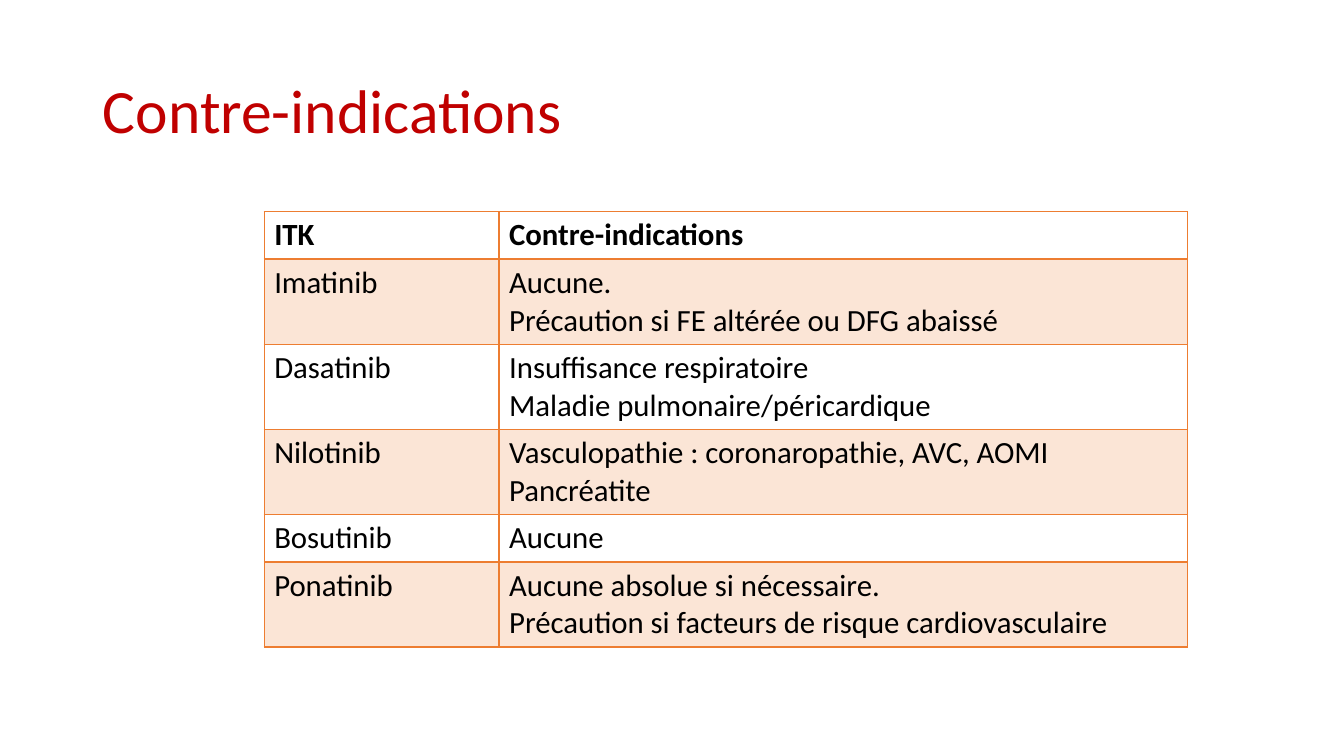
from dataclasses import dataclass

from lxml import etree
from pptx import Presentation
from pptx.dml.color import RGBColor
from pptx.enum.text import MSO_ANCHOR, PP_ALIGN
from pptx.oxml.ns import qn
from pptx.util import Inches, Pt

LEFT, MIDDLE = PP_ALIGN.LEFT, MSO_ANCHOR.MIDDLE

TITLE = "Contre-indications"
ROWS = [
    ("ITK", ["Contre-indications"]),
    ("Imatinib", ["Aucune.", "Précaution si FE altérée ou DFG abaissé"]),
    ("Dasatinib", ["Insuffisance respiratoire", "Maladie pulmonaire/péricardique"]),
    ("Nilotinib", ["Vasculopathie : coronaropathie, AVC, AOMI", "Pancréatite"]),
    ("Bosutinib", ["Aucune"]),
    ("Ponatinib", ["Aucune absolue si nécessaire.",
                   "Précaution si facteurs de risque cardiovasculaire"]),
]
COLUMNS = (2.33, 6.83)
TABLE_LEFT, TABLE_TOP = 2.62, 2.1
LINE_HEIGHT, CELL_PADDING = 0.37, 0.1


@dataclass(frozen=True)
class Theme:
    font: str = "Calibri"
    title: str = "C00000"
    text: str = "000000"
    border: str = "ED7D31"
    band: str = "FBE5D6"
    title_size: int = 44
    table_size: int = 22
    thin: int = 1
    thick: int = 2


THEME = Theme()


def add_run(p, text, size, color, bold=False):
    r = p.add_run()
    r.text = text
    r.font.name = THEME.font
    r.font.size = Pt(size)
    r.font.bold = bold
    r.font.color.rgb = RGBColor.from_string(color)


def set_borders(cell, top, bottom):
    """Draw the four cell edges; they must precede the fill in the XML."""
    tcPr = cell._tc.get_or_add_tcPr()
    widths = {"a:lnL": THEME.thin, "a:lnR": THEME.thin, "a:lnT": top, "a:lnB": bottom}
    for i, (tag, width) in enumerate(widths.items()):
        ln = etree.Element(qn(tag), w=str(Pt(width)))
        fill = etree.SubElement(ln, qn("a:solidFill"))
        etree.SubElement(fill, qn("a:srgbClr"), val=THEME.border)
        tcPr.insert(i, ln)


def fill_cell(cell, lines, row):
    if row % 2:
        cell.fill.solid()
        cell.fill.fore_color.rgb = RGBColor.from_string(THEME.band)
    else:
        cell.fill.background()
    set_borders(cell, THEME.thick if row == 1 else THEME.thin,
                THEME.thick if row == 0 else THEME.thin)
    tf = cell.text_frame
    for i, line in enumerate(lines):
        p = tf.add_paragraph() if i else tf.paragraphs[0]
        add_run(p, line, THEME.table_size, THEME.text, bold=row == 0)


def add_title(s):
    sp = s.shapes.title
    sp.left, sp.top, sp.width, sp.height = map(Inches, (0.92, 0.4, 11.5, 1.45))
    tf = sp.text_frame
    tf.vertical_anchor = MIDDLE
    p = tf.paragraphs[0]
    p.alignment = LEFT
    p.line_spacing = 0.9
    add_run(p, TITLE, THEME.title_size, THEME.title)


def add_drug_table(s):
    heights = [CELL_PADDING + LINE_HEIGHT * len(lines) for _, lines in ROWS]
    box = map(Inches, (TABLE_LEFT, TABLE_TOP, sum(COLUMNS), sum(heights)))
    table = s.shapes.add_table(len(ROWS), len(COLUMNS), *box).table
    for column, width in zip(table.columns, COLUMNS):
        column.width = Inches(width)
    for row, (drug, lines) in enumerate(ROWS):
        table.rows[row].height = Inches(heights[row])
        fill_cell(table.cell(row, 0), [drug], row)
        fill_cell(table.cell(row, 1), lines, row)


def main():
    prs = Presentation()
    prs.slide_width, prs.slide_height = Inches(13.33), Inches(7.5)
    s = prs.slides.add_slide(prs.slide_layouts.get_by_name("Title Only"))
    add_title(s)
    add_drug_table(s)
    prs.save("out.pptx")


if __name__ == "__main__":
    main()
